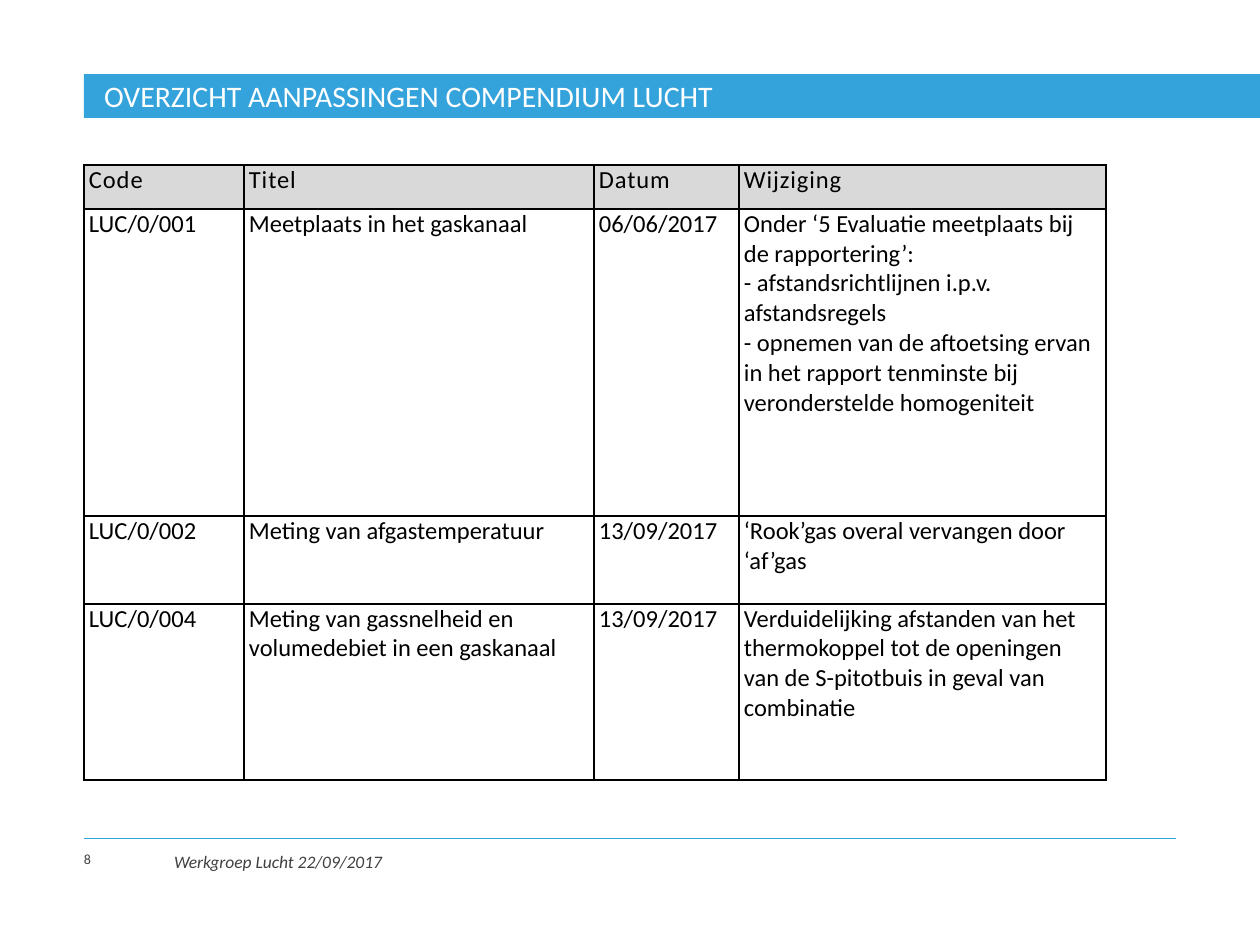
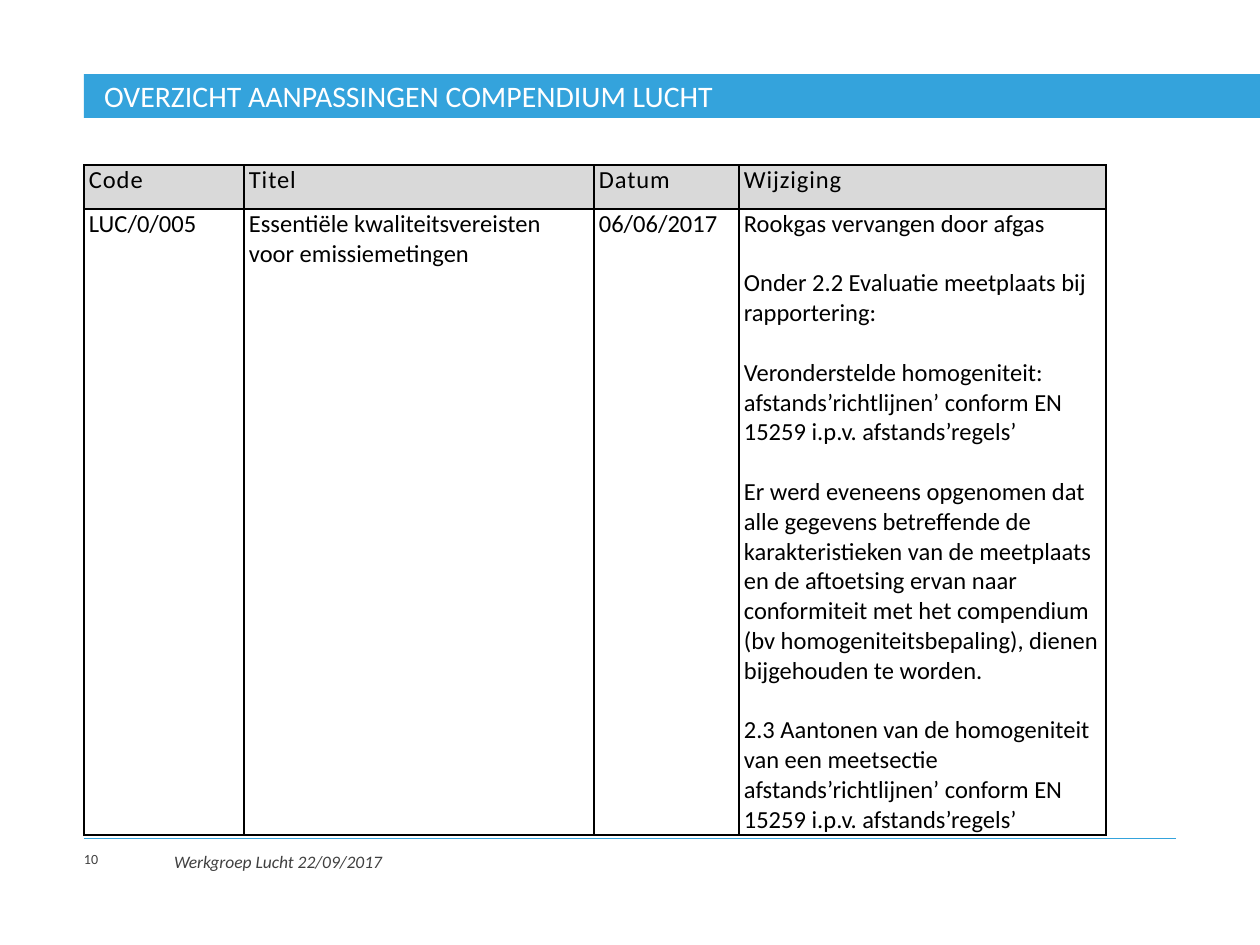
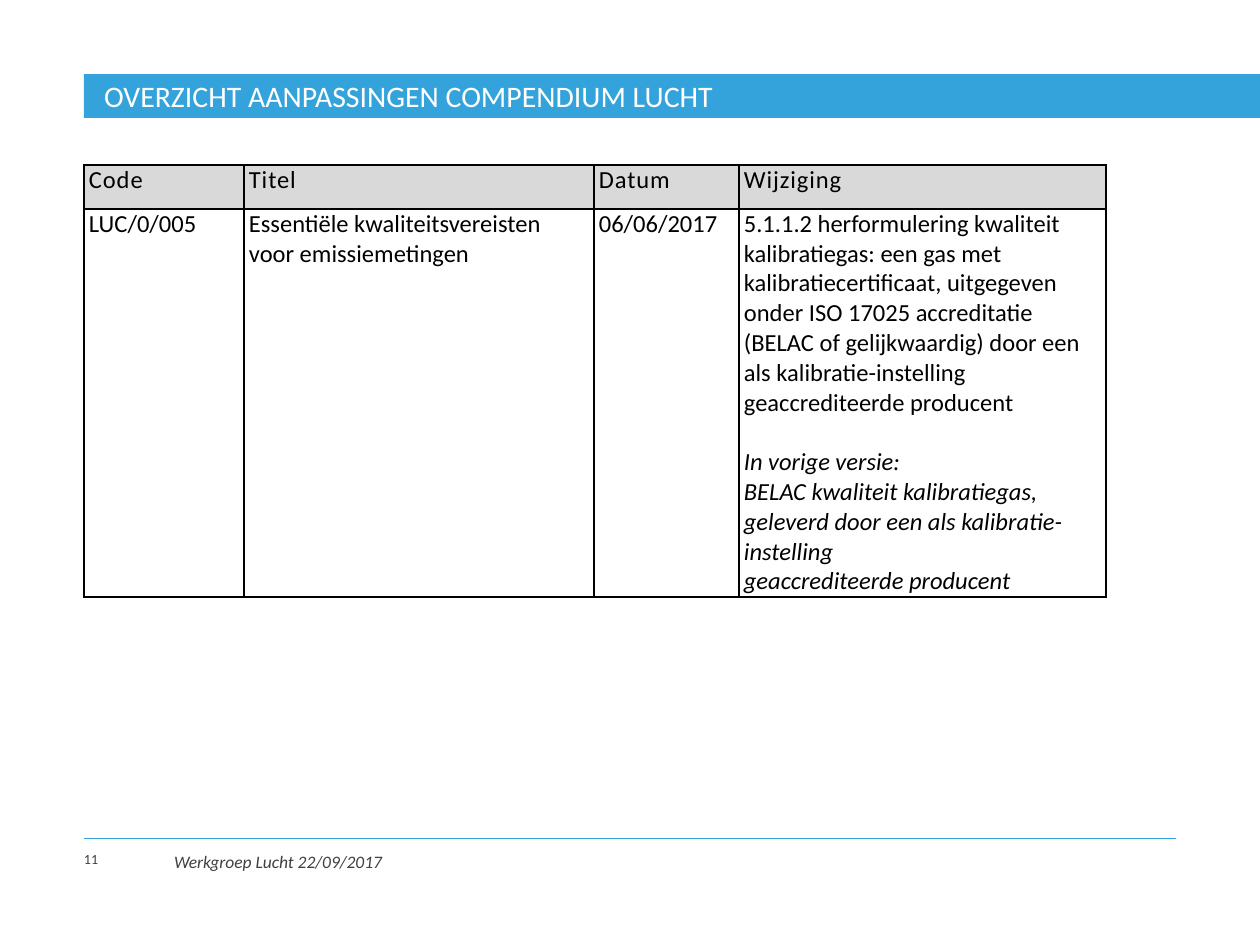
import dataclasses

import pptx
import pptx.dml.color
import pptx.enum.shapes
import pptx.enum.text
import pptx.oxml
import pptx.oxml.ns
import pptx.util

PX = 914400 / 126  # EMU in one px


@dataclasses.dataclass(frozen=True)
class Theme:
    font: str = "Calibri"
    blue: str = "34A3DC"
    white: str = "FFFFFF"
    black: str = "000000"
    footer_gray: str = "404040"
    header_gray: str = "D9D9D9"
    title_size: int = 17
    table_size: int = 14
    footer_size: int = 10
    number_size: int = 8
    paragraph_gap: int = 17
    rule_width: float = 0.5
    border_width: int = 1


@dataclasses.dataclass(frozen=True)
class Para:
    text: str
    gap: bool = False
    italic: bool = False


THEME = Theme()
LEFT, RIGHT, SLIDE_W, SLIDE_H = 84, 1176, 1260, 945
BAND_TOP, BAND_H = 74, 44
RULE_Y, FOOTER_TOP, FOOTER_H = 838, 851, 50
TABLE_TOP, HEADER_H, CELL_INSET = 165, 44, 5
COLUMNS = [160, 350, 145, 367]

TITLE = "OVERZICHT AANPASSINGEN COMPENDIUM LUCHT"
FOOTER = "Werkgroep Lucht 22/09/2017"
HEADERS = ["Code", "Titel", "Datum", "Wijziging"]
LUC_005 = ["LUC/0/005", "Essentiële kwaliteitsvereisten voor emissiemetingen", "06/06/2017"]

# Slide number, then (row height, cells) for each row
SLIDES = [
    ("8", [
        (307, ["LUC/0/001", "Meetplaats in het gaskanaal", "06/06/2017", [
            Para("Onder ‘5 Evaluatie meetplaats bij de rapportering’:"),
            Para("- afstandsrichtlijnen i.p.v. afstandsregels"),
            Para("- opnemen van de aftoetsing ervan in het rapport tenminste bij "
                 "veronderstelde homogeniteit"),
        ]]),
        (88, ["LUC/0/002", "Meting van afgastemperatuur", "13/09/2017",
              "‘Rook’gas overal vervangen door ‘af’gas"]),
        (176, ["LUC/0/004", "Meting van gassnelheid en volumedebiet in een gaskanaal",
               "13/09/2017",
               "Verduidelijking afstanden van het thermokoppel tot de openingen van de "
               "S-pitotbuis in geval van combinatie"]),
    ]),
    ("10", [
        (626, LUC_005 + [[
            Para("Rookgas vervangen door afgas"),
            Para("Onder 2.2 Evaluatie meetplaats bij rapportering:", gap=True),
            Para("Veronderstelde homogeniteit: afstands’richtlijnen’ conform EN 15259 "
                 "i.p.v. afstands’regels’", gap=True),
            Para("Er werd eveneens opgenomen dat alle gegevens betreffende de "
                 "karakteristieken van de meetplaats en de aftoetsing ervan naar "
                 "conformiteit met het compendium (bv homogeniteitsbepaling), dienen "
                 "bijgehouden te worden.", gap=True),
            Para("2.3 Aantonen van de homogeniteit van een meetsectie", gap=True),
            Para("afstands’richtlijnen’ conform EN 15259 i.p.v. afstands’regels’"),
        ]]),
    ]),
    ("11", [
        (388, LUC_005 + [[
            Para("5.1.1.2 herformulering kwaliteit kalibratiegas: een gas met "
                 "kalibratiecertificaat, uitgegeven onder ISO 17025 accreditatie (BELAC of "
                 "gelijkwaardig) door een als kalibratie-instelling geaccrediteerde producent"),
            Para("In vorige versie:", gap=True, italic=True),
            Para("BELAC kwaliteit kalibratiegas, geleverd door een als "
                 "kalibratie-instelling", italic=True),
            Para("geaccrediteerde producent", italic=True),
        ]]),
    ]),
]


def px(n):
    return pptx.util.Emu(round(n * PX))


def rgb(color):
    return pptx.dml.color.RGBColor.from_string(color)


def style(p, size, color, italic=False):
    p.font.name = THEME.font
    p.font.size = pptx.util.Pt(size)
    p.font.bold = False
    p.font.italic = italic
    p.font.color.rgb = rgb(color)


def clear_insets(tf):
    tf.margin_left = tf.margin_right = tf.margin_top = tf.margin_bottom = 0
    tf.word_wrap = True


def add_title(s):
    """Title on a blue band that runs off to the right edge."""
    band = s.shapes.add_shape(pptx.enum.shapes.MSO_SHAPE.RECTANGLE, px(LEFT), px(BAND_TOP),
                              px(SLIDE_W - LEFT), px(BAND_H))
    band.shadow.inherit = False
    band.fill.solid()
    band.fill.fore_color.rgb = rgb(THEME.blue)
    band.line.fill.background()
    title = s.shapes.title
    title._element.addprevious(band._element)  # band goes behind the title
    title.left, title.top, title.width, title.height = px(104), px(BAND_TOP), px(1112), px(BAND_H)
    tf = title.text_frame
    clear_insets(tf)
    tf.auto_size = pptx.enum.text.MSO_AUTO_SIZE.NONE
    tf.vertical_anchor = pptx.enum.text.MSO_ANCHOR.MIDDLE
    p = tf.paragraphs[0]
    p.text = TITLE
    p.alignment = pptx.enum.text.PP_ALIGN.LEFT
    style(p, THEME.title_size, THEME.white)


def add_text(s, left, width, text, size, italic=False):
    tf = s.shapes.add_textbox(px(left), px(FOOTER_TOP), px(width), px(FOOTER_H)).text_frame
    clear_insets(tf)
    p = tf.paragraphs[0]
    p.text = text
    style(p, size, THEME.footer_gray, italic)


def add_footer(s, number):
    rule = s.shapes.add_connector(pptx.enum.shapes.MSO_CONNECTOR.STRAIGHT,
                                  px(LEFT), px(RULE_Y), px(RIGHT), px(RULE_Y))
    rule.line.color.rgb = rgb(THEME.blue)
    rule.line.width = pptx.util.Pt(THEME.rule_width)
    rule._element.spPr.append(pptx.oxml.parse_xml(
        f"<a:effectLst {pptx.oxml.ns.nsdecls('a')}/>"))
    add_text(s, 174, 835, FOOTER, THEME.footer_size, italic=True)
    add_text(s, LEFT, 73, number, THEME.number_size)


def add_borders(cell):
    tcPr = cell._tc.get_or_add_tcPr()
    for side in "LRTB":
        tcPr.append(pptx.oxml.parse_xml(
            f"<a:ln{side} {pptx.oxml.ns.nsdecls('a')} w='{THEME.border_width * 12700}'>"
            f"<a:solidFill><a:srgbClr val='{THEME.black}'/></a:solidFill></a:ln{side}>"))


def fill_cell(cell, content, header):
    cell.margin_left = cell.margin_right = px(CELL_INSET)
    cell.margin_top = cell.margin_bottom = 0
    add_borders(cell)
    if header:
        cell.fill.solid()
        cell.fill.fore_color.rgb = rgb(THEME.header_gray)
    else:
        cell.fill.background()
    paras = [Para(content)] if isinstance(content, str) else content
    tf = cell.text_frame
    for i, para in enumerate(paras):
        p = tf.add_paragraph() if i else tf.paragraphs[0]
        p.text = para.text
        if para.gap:
            p.space_before = pptx.util.Pt(THEME.paragraph_gap)
        style(p, THEME.table_size, THEME.black, para.italic)
        if header:  # letter spacing of half a point
            p._p.get_or_add_pPr().get_or_add_defRPr().set("spc", "50")


def add_changes_table(s, body):
    rows = [(HEADER_H, HEADERS)] + body
    table = s.shapes.add_table(len(rows), len(COLUMNS), px(LEFT), px(TABLE_TOP),
                               px(sum(COLUMNS)), px(sum(h for h, _ in rows))).table
    table.first_row = table.horz_banding = False
    for column, width in zip(table.columns, COLUMNS):
        column.width = px(width)
    for r, (height, contents) in enumerate(rows):
        table.rows[r].height = px(height)
        for c, content in enumerate(contents):
            fill_cell(table.cell(r, c), content, header=r == 0)


def main():
    prs = pptx.Presentation()
    prs.slide_width, prs.slide_height = px(SLIDE_W), px(SLIDE_H)
    for number, body in SLIDES:
        s = prs.slides.add_slide(prs.slide_layouts[5])  # Title Only
        add_title(s)
        add_footer(s, number)
        add_changes_table(s, body)
    prs.save("out.pptx")


if __name__ == "__main__":
    main()
